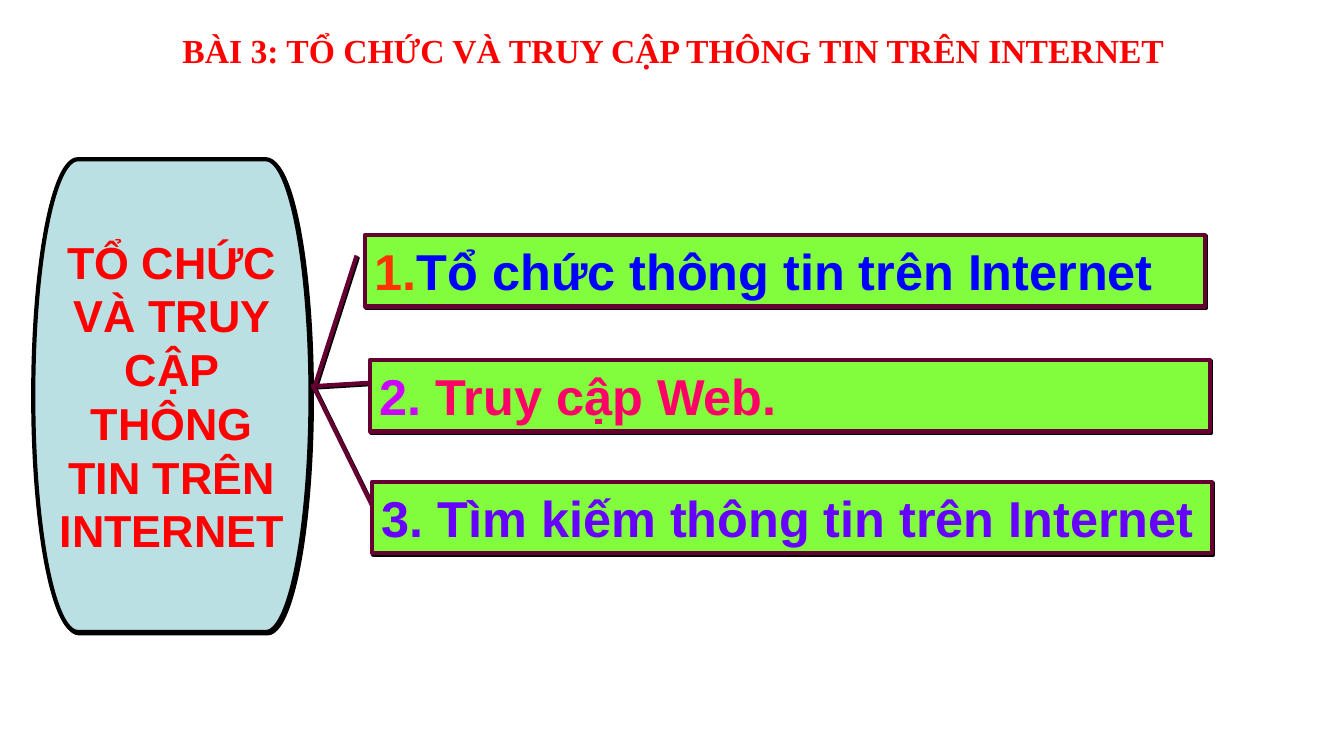
from lxml.etree import SubElement
from pptx import Presentation
from pptx.dml.color import RGBColor
from pptx.enum.shapes import MSO_SHAPE
from pptx.enum.text import MSO_ANCHOR, MSO_AUTO_SIZE, PP_ALIGN
from pptx.oxml.ns import qn
from pptx.util import Inches, Pt

RED = "FF0000"
BLACK = "000000"

# Each topic: left, top, pointer line adjustments, coloured text runs
TOPICS = [
    (3.62, 2.33, (0.29, -0.01, 2.12, -0.06),
     [("1.", "FF3300"), ("Tổ chức thông tin trên Internet", "0000FF")]),
    (3.67, 3.57, (0.32, 0, 0.37, -0.07),
     [("2. ", "CC00FF"), ("Truy cập Web.", "FF0066")]),
    (3.69, 4.78, (0.33, 0, -1.34, -0.07),
     [("3. Tìm kiếm thông tin trên Internet", "6600FF")]),
]


def color(code):
    return RGBColor.from_string(code)


def style(item, **form):
    for name, value in form.items():
        setattr(item, name, value)


def place(shape, box):
    names = ("left", "top", "width", "height")
    style(shape, **dict(zip(names, map(Inches, box))))


def write(shape, runs, size, align, anchor, face="Arial"):
    frame = shape.text_frame
    style(frame, word_wrap=True, vertical_anchor=anchor,
          auto_size=MSO_AUTO_SIZE.SHAPE_TO_FIT_TEXT)
    para = frame.paragraphs[0]
    para.alignment = align
    for text, code in runs:
        run = para.add_run()
        run.text = text
        style(run.font, name=face, size=Pt(size), bold=True)
        run.font.color.rgb = color(code)


def shade(shape):
    # Hard shadow cast to the lower right
    shape.shadow.inherit = False
    effects = shape._element.spPr.find(qn("a:effectLst"))
    cast = SubElement(effects, qn("a:outerShdw"), dist=str(Pt(1.4)),
                      dir=str(45 * 60000), algn="ctr", rotWithShape="0")
    SubElement(cast, qn("a:srgbClr"), val=BLACK)


def add_box(slide, kind, box, fill, line):
    shape = slide.shapes.add_shape(kind, *map(Inches, box))
    shape.fill.solid()
    shape.fill.fore_color.rgb = color(fill)
    shape.line.color.rgb = color(line)
    shape.line.width = Pt(3)
    shade(shape)
    return shape


def add_topic(slide, left, top, points, runs):
    shape = add_box(slide, MSO_SHAPE.LINE_CALLOUT_1,
                    (left, top, 8.33, 0.71), "82FD3D", "660033")
    for i, point in enumerate(points):
        shape.adjustments[i] = point
    write(shape, runs, 36, PP_ALIGN.JUSTIFY, MSO_ANCHOR.MIDDLE)


def main():
    deck = Presentation()
    style(deck, slide_width=Inches(13.33), slide_height=Inches(7.5))
    slide = deck.slides.add_slide(deck.slide_layouts[5])

    # Lesson title
    title = slide.shapes.title
    place(title, (1.71, 0.25, 11.42, 0.91))
    write(title, [("BÀI 3: TỔ CHỨC VÀ TRUY CẬP THÔNG TIN TRÊN INTERNET", RED)],
          24, PP_ALIGN.LEFT, MSO_ANCHOR.TOP, "Times New Roman")

    # Main theme
    theme = add_box(slide, MSO_SHAPE.FLOWCHART_TERMINATOR,
                    (0.33, 1.58, 2.75, 4.69), "BBE0E3", BLACK)
    write(theme, [("TỔ CHỨC VÀ TRUY CẬP THÔNG TIN TRÊN INTERNET", RED)],
          32, PP_ALIGN.CENTER, MSO_ANCHOR.MIDDLE)

    # Topics that branch from the theme
    for topic in TOPICS:
        add_topic(slide, *topic)

    deck.save("out.pptx")


if __name__ == "__main__":
    main()
